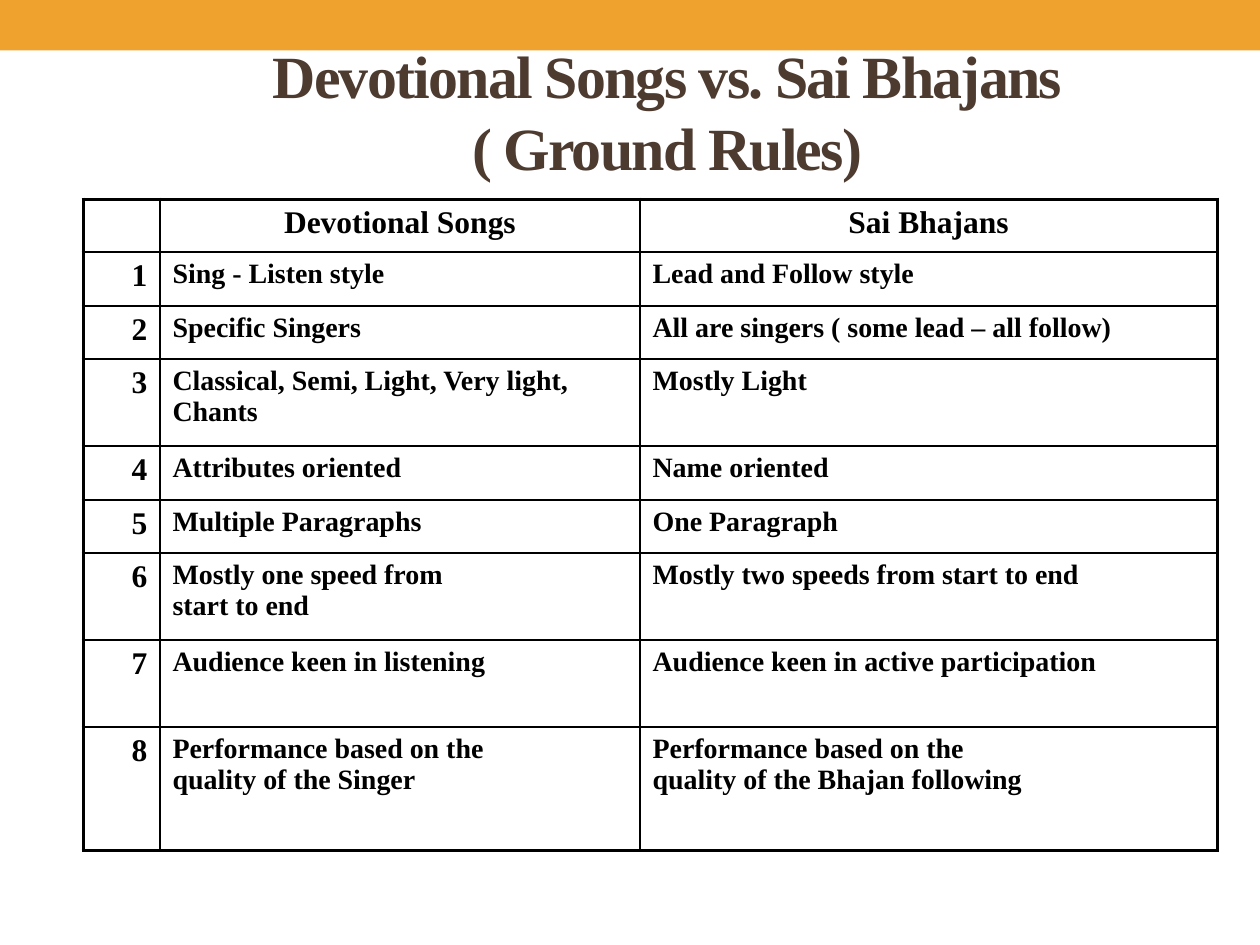
"""Build a slide comparing devotional songs with Sai bhajans."""
from lxml import etree
from pptx import Presentation, util as u
from pptx.dml.color import RGBColor
from pptx.enum import shapes, text
from pptx.oxml.ns import qn


def style(para, size, color, align):
    para.alignment = align
    for run in para.runs:
        font = run.font
        font.name, font.size, font.bold = "Times New Roman", u.Pt(size), True
        font.color.rgb = RGBColor.from_string(color)


def edge(cell, side, width, spot):
    line = etree.Element(qn("a:ln" + side), w=str(u.Pt(width)))
    fill = etree.SubElement(line, qn("a:solidFill"))
    etree.SubElement(fill, qn("a:srgbClr"), val="000000")
    cell._tc.get_or_add_tcPr().insert(spot, line)


deck = Presentation()
deck.slide_width, deck.slide_height = u.Inches(10), u.Inches(7.5)
slide = deck.slides.add_slide(deck.slide_layouts[5])
align = text.PP_ALIGN

bar = slide.shapes.add_shape(
    shapes.MSO_SHAPE.RECTANGLE, 0, 0, deck.slide_width, u.Inches(0.4))
bar.shadow.inherit = False
bar.fill.solid()
bar.fill.fore_color.rgb = RGBColor.from_string("F0A22E")
bar.line.fill.background()

title = slide.shapes.title
title.left, title.top = u.Inches(0.92), u.Inches(0.5)
title.width, title.height = u.Inches(8.75), u.Inches(0.75)
frame = title.text_frame
frame.text = "Devotional Songs vs. Sai Bhajans\v( Ground Rules)"
frame.word_wrap = True
frame.auto_size = text.MSO_AUTO_SIZE.NONE
frame.vertical_anchor = text.MSO_ANCHOR.MIDDLE
head = frame.paragraphs[0]
head.line_spacing = u.Pt(41)
style(head, 34.2, "4E3B30", align.CENTER)
for run in head.runs:
    run.font._element.set("spc", "-100")

rows = [
    ("Devotional Songs", "Sai Bhajans"),
    ("Sing - Listen style", "Lead and Follow style"),
    ("Specific Singers", "All are singers ( some lead – all follow)"),
    ("Classical, Semi, Light, Very light, Chants", "Mostly Light"),
    ("Attributes oriented", "Name oriented"),
    ("Multiple Paragraphs", "One Paragraph"),
    ("Mostly one speed from\nstart to end", "Mostly two speeds from start to end"),
    ("Audience keen in listening", "Audience keen in active participation"),
    ("Performance based on the\nquality of the Singer",
     "Performance based on the\nquality of the Bhajan following"),
]
wide = [0.61, 3.81, 4.58]
high = [0.42, 0.43, 0.42, 0.69, 0.43, 0.42, 0.69, 0.69, 0.98]
grid = slide.shapes.add_table(
    len(high), len(wide), u.Inches(0.66), u.Inches(1.58),
    u.Inches(sum(wide)), u.Inches(sum(high))).table
grid.first_row = grid.horz_banding = False
for col, size in zip(grid.columns, wide):
    col.width = u.Inches(size)
for row, size in zip(grid.rows, high):
    row.height = u.Inches(size)

for r, pair in enumerate(rows):
    for c, words in enumerate((str(r) if r else "", *pair)):
        cell = grid.cell(r, c)
        cell.text = words
        cell.fill.background()
        place = align.CENTER if r == 0 else align.RIGHT if c == 0 else align.LEFT
        for para in cell.text_frame.paragraphs:
            style(para, 18 if r == 0 or c == 0 else 16, "000000", place)
        outer = {"L": c == 0, "R": c == len(wide) - 1,
                 "T": r == 0, "B": r == len(high) - 1}
        for spot, (side, rim) in enumerate(outer.items()):
            edge(cell, side, 2 if rim else 1, spot)

deck.save("out.pptx")
